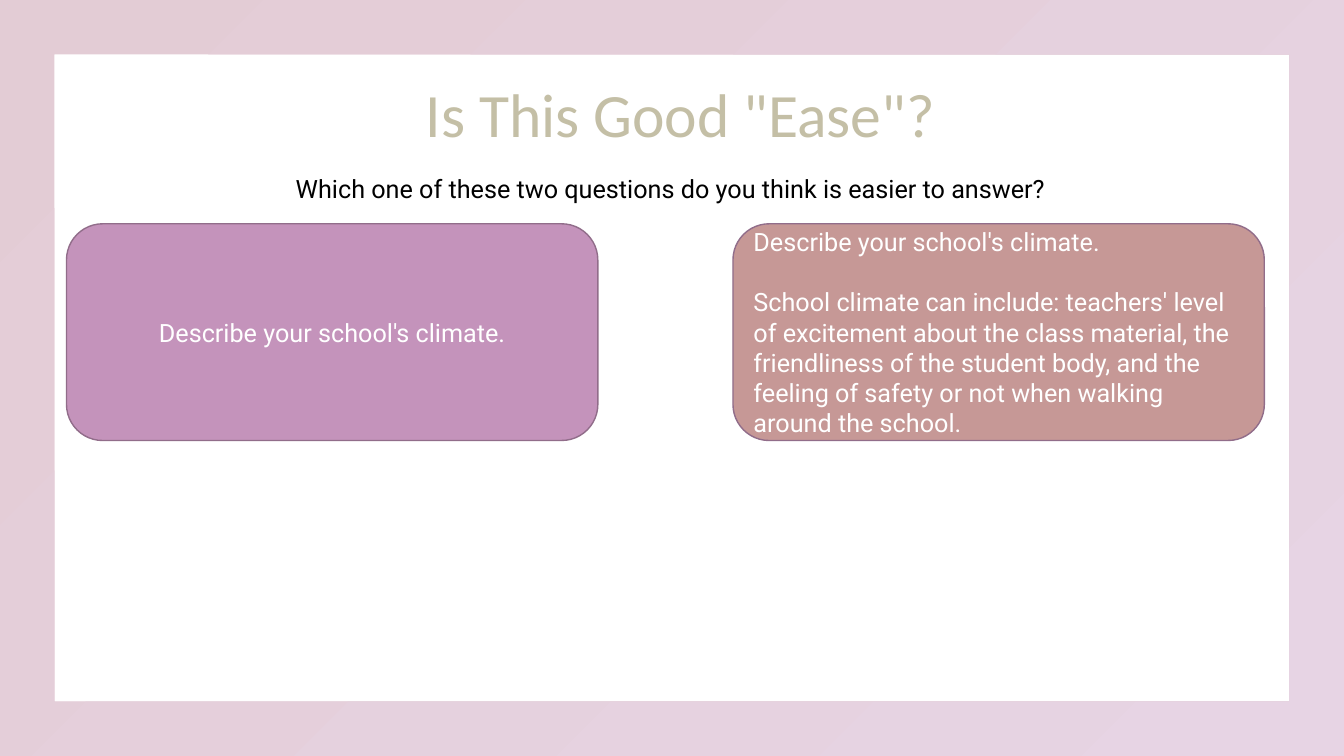
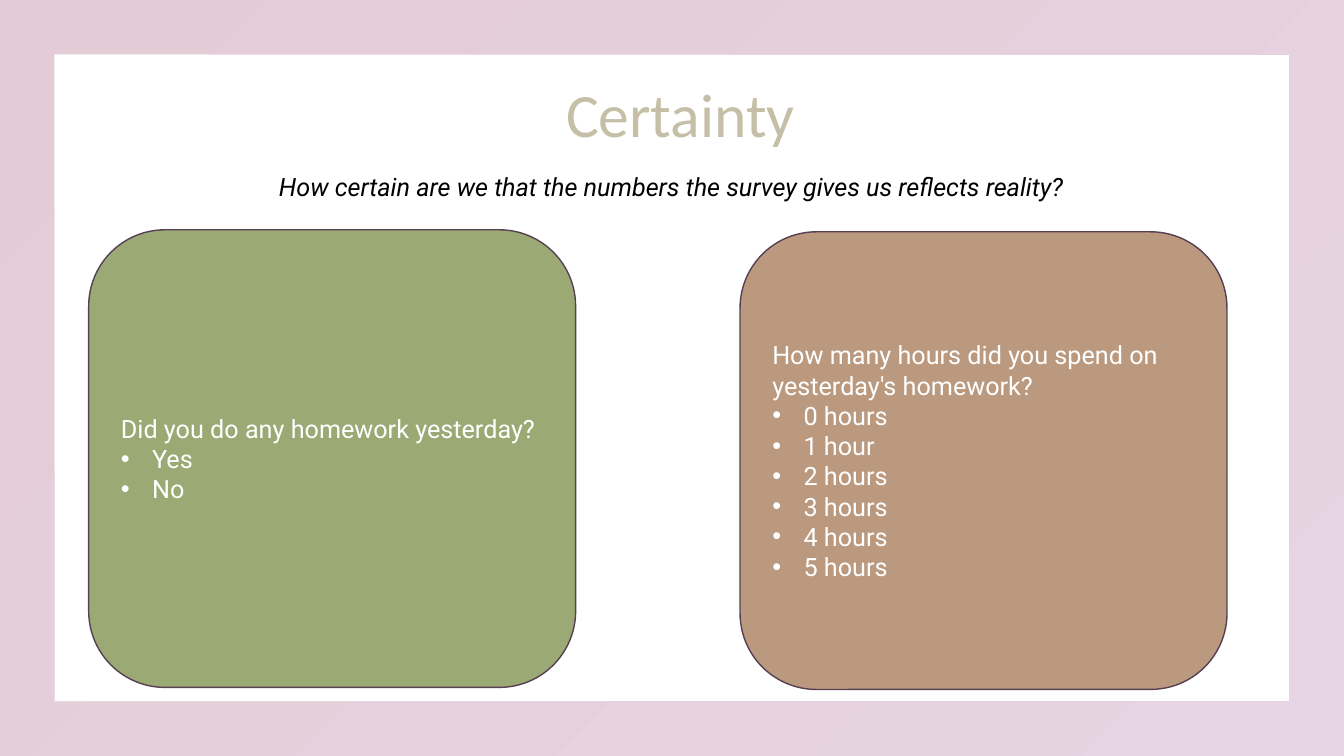
from lxml.etree import SubElement as Sub
from pptx import Presentation
from pptx.dml.color import RGBColor
from pptx.enum.shapes import MSO_SHAPE as Shape
from pptx.enum.text import MSO_ANCHOR as Anchor, MSO_AUTO_SIZE as Auto, PP_ALIGN as Align
from pptx.oxml.ns import qn
from pptx.util import Inches, Pt

WIDE, HIGH = 13.33, 7.5
PINK, LILAC = "E3CCD5", "E7D4E4"
SAND, BLACK, WHITE = "C4BFA6", "000000", "FFFFFF"
HEAD = {"name": "Calibri", "size": Pt(44)}
BODY = {"name": "Roboto", "size": Pt(18)}
MID = {"alignment": Align.CENTER}
LEFT = {"alignment": Align.LEFT}
GAP = {**LEFT, "space_before": Pt(21.5)}


def rgb(text):
    return RGBColor.from_string(text)


def apply(item, form):
    for name, value in form.items():
        setattr(item, name, value)


class Deck:
    """Holds the shared style and the slide being built."""

    def __init__(self):
        self.show = Presentation()
        apply(self.show, {"slide_width": Inches(WIDE), "slide_height": Inches(HIGH)})

    def start(self, title):
        self.slide = self.show.slides.add_slide(self.show.slide_layouts[5])
        self.frame()
        head = self.slide.shapes.title
        apply(head, dict(left=Inches(0.74), top=Inches(0.64),
                         width=Inches(12.02), height=Inches(0.91)))
        apply(head.text_frame, {"auto_size": Auto.NONE, "vertical_anchor": Anchor.BOTTOM})
        self.label(head, [(title, {**MID, "line_spacing": 0.9})], HEAD, SAND)

    def shape(self, kind, *box):
        item = self.slide.shapes.add_shape(kind, *map(Inches, box))
        item.shadow.inherit = False
        return item

    def frame(self):
        edge = self.shape(Shape.FRAME, 0, 0, WIDE, HIGH)
        edge.adjustments[0] = 0.072
        edge.line.fill.background()
        edge.fill.gradient()
        edge.fill.gradient_angle = 315
        for stop, tint, spot in zip(edge.fill.gradient_stops, (PINK, LILAC), (0, 1)):
            stop.color.rgb = rgb(tint)
            stop.position = spot

    def label(self, item, lines, font, color):
        text = item.text_frame
        text.word_wrap = True
        for num, (words, form) in enumerate(lines):
            para = text.add_paragraph() if num else text.paragraphs[0]
            apply(para, form)
            run = para.add_run()
            run.text = words
            apply(run.font, font)
            run.font.color.rgb = rgb(color)

    def prompt(self, words, left, top, width, **form):
        box = self.slide.shapes.add_textbox(*map(Inches, (left, top, width, 0.4)))
        self.label(box, [(words, MID)], {**BODY, **form}, BLACK)

    def card(self, box, fill, line, lines):
        item = self.shape(Shape.ROUNDED_RECTANGLE, *box)
        item.fill.solid()
        item.fill.fore_color.rgb = rgb(fill)
        item.line.color.rgb = rgb(line)
        item.line.width = Pt(1)
        item.text_frame.vertical_anchor = Anchor.MIDDLE
        self.label(item, lines, BODY, WHITE)
        return item

    def quiz(self, box, fill, line, ask, picks):
        item = self.card(box, fill, line, [(words, LEFT) for words in (ask, *picks)])
        for para in item.text_frame.paragraphs[1:]:
            prop = para._p.get_or_add_pPr()
            prop.set("marL", str(Inches(0.31)))
            prop.set("indent", str(-Inches(0.31)))
            Sub(prop, qn("a:buFont"), typeface="Arial")
            Sub(prop, qn("a:buChar"), char="•")


def main():
    deck = Deck()

    deck.start('Is This Good "Ease"?')
    deck.prompt("Which one of these two questions do you think is easier to answer?",
                0.54, 1.67, 12.22)
    ask = "Describe your school's climate."
    more = ("School climate can include: teachers' level of excitement about the class "
            "material, the friendliness of the student body, and the feeling of safety "
            "or not when walking around the school.")
    size, line = (5.27, 2.15), "916D8A"
    deck.card((0.66, 2.22, *size), "C493BB", line, [(ask, MID)])
    deck.card((7.27, 2.22, *size), "C69896", line, [(ask, LEFT), (more, GAP)])

    deck.start("Certainty")
    deck.prompt("How certain are we that the numbers the survey gives us reflects reality?",
                0.63, 1.65, 12.06, italic=True)
    size, line = (4.83, 4.54), "564052"
    deck.quiz((0.88, 2.28, *size), "9BAA74", line,
              "Did you do any homework yesterday?", ["Yes", "No"])
    hours = [f"{num} hour{'' if num == 1 else 's'}" for num in range(6)]
    deck.quiz((7.34, 2.3, *size), "BA997F", line,
              "How many hours did you spend on yesterday's homework?", hours)

    deck.show.save("out.pptx")


if __name__ == "__main__":
    main()
